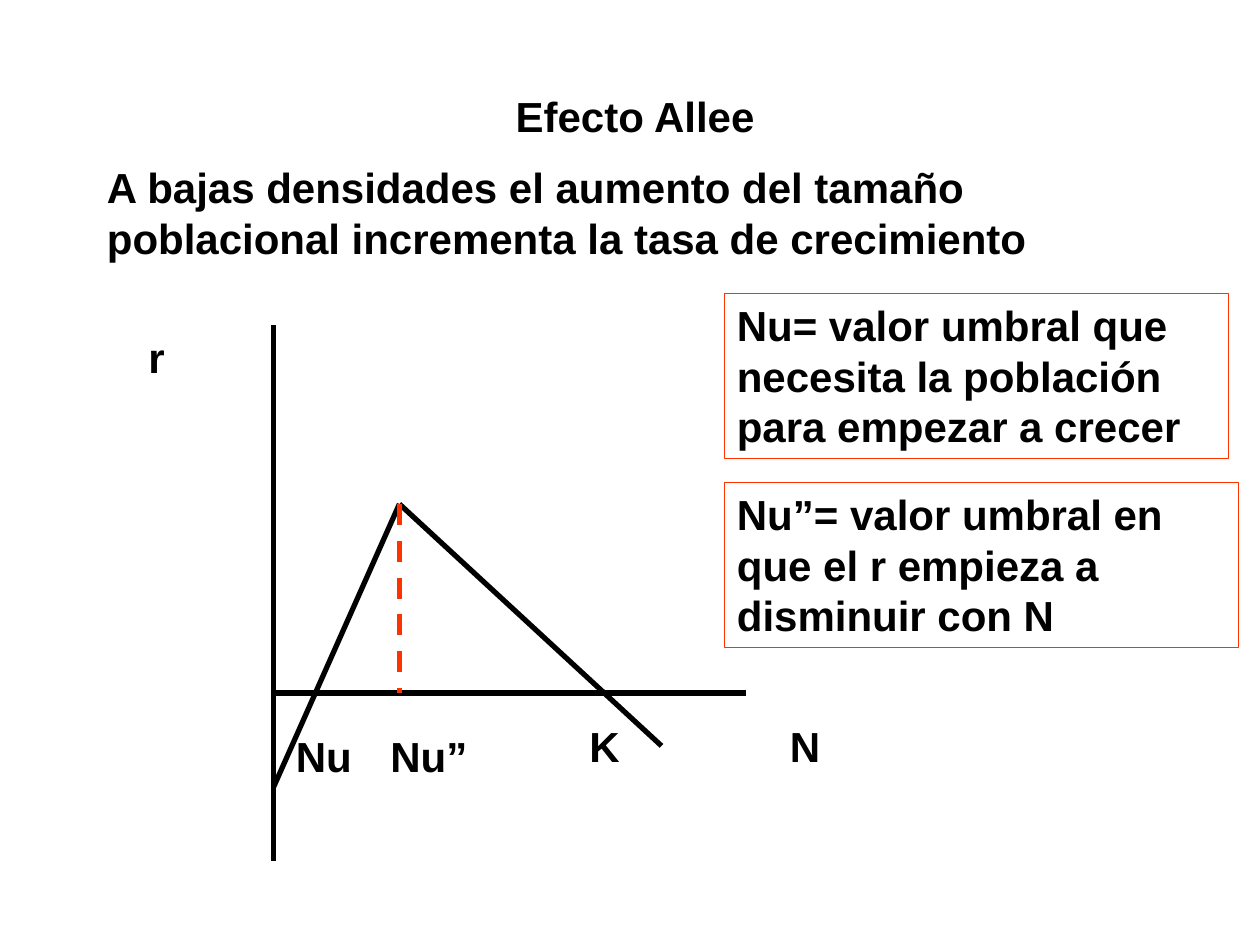
from lxml import etree
from pptx import Presentation
from pptx.dml.color import RGBColor
from pptx.enum.dml import MSO_LINE
from pptx.enum.shapes import MSO_CONNECTOR, MSO_SHAPE
from pptx.enum.text import MSO_ANCHOR, MSO_AUTO_SIZE, PP_ALIGN
from pptx.oxml.ns import qn
from pptx.util import Inches, Pt

BLACK = RGBColor(0x00, 0x00, 0x00)
RED = RGBColor(0xFF, 0x33, 0x00)

# Points of the growth curve
AXIS_X, AXIS_Y = 2.17, 5.5
START = (AXIS_X, 6.25)
PEAK = (3.17, 4)
END = (5.25, 5.92)


def write(shape, paragraphs):
    """Fill a shape with (text, alignment) paragraphs."""
    tf = shape.text_frame
    tf.word_wrap = True
    tf.auto_size = MSO_AUTO_SIZE.SHAPE_TO_FIT_TEXT
    tf.vertical_anchor = MSO_ANCHOR.TOP
    for i, (text, align) in enumerate(paragraphs):
        p = tf.add_paragraph() if i else tf.paragraphs[0]
        p.alignment = align
        p.space_before = Pt(12)
        r = p.add_run()
        r.text = text
        r.font.name = "Arial"
        r.font.size = Pt(24)
        r.font.bold = True
        r.font.color.rgb = BLACK


def add_text(s, box, *paragraphs):
    write(s.shapes.add_textbox(*map(Inches, box)), paragraphs)


def add_note(s, box, text):
    """Add a definition in a thin red frame."""
    sp = s.shapes.add_shape(MSO_SHAPE.RECTANGLE, *map(Inches, box))
    sp.shadow.inherit = False
    sp.fill.background()
    sp.line.color.rgb = RED
    sp.line.width = Pt(0.75)
    write(sp, [(text, PP_ALIGN.LEFT)])


def add_line(s, start, end, color=BLACK, dash=None):
    line = s.shapes.add_connector(MSO_CONNECTOR.STRAIGHT, *map(Inches, start + end))
    line.line.color.rgb = color
    line.line.width = Pt(3)
    if dash:
        line.line.dash_style = dash
    etree.SubElement(line._element.spPr, qn("a:effectLst"))


def main():
    prs = Presentation()
    prs.slide_width, prs.slide_height = Inches(10), Inches(7.5)
    s = prs.slides.add_slide(prs.slide_layouts[6])

    # Title and statement
    add_text(
        s, (0.75, 0.67, 8.58, 1.5),
        ("Efecto Allee", PP_ALIGN.CENTER),
        ("A bajas densidades el aumento del tamaño poblacional "
         "incrementa la tasa de crecimiento", PP_ALIGN.LEFT),
    )

    # Axes, growth curve and threshold
    add_line(s, (AXIS_X, 2.58), (AXIS_X, 6.83))
    add_line(s, (AXIS_X, AXIS_Y), (5.92, AXIS_Y))
    add_line(s, START, PEAK)
    add_line(s, PEAK, END)
    add_line(s, PEAK, (PEAK[0], AXIS_Y), RED, MSO_LINE.DASH)

    # Graph labels
    for text, left, top, width in [
        ("r", 1.08, 2.58, 0.83),
        ("N", 6.17, 5.67, 0.92),
        ("Nu", 2.25, 5.75, 0.75),
        ("K", 4.58, 5.67, 0.58),
        ("Nu”", 3, 5.75, 0.92),
    ]:
        add_text(s, (left, top, width, 0.5), (text, PP_ALIGN.LEFT))

    # Definitions
    add_note(s, (5.75, 2.33, 4, 1.31),
             "Nu= valor umbral que necesita la población para empezar a crecer")
    add_note(s, (5.75, 3.83, 4.08, 1.31),
             "Nu”= valor umbral en que el r empieza a disminuir con N")

    prs.save("out.pptx")


if __name__ == "__main__":
    main()
